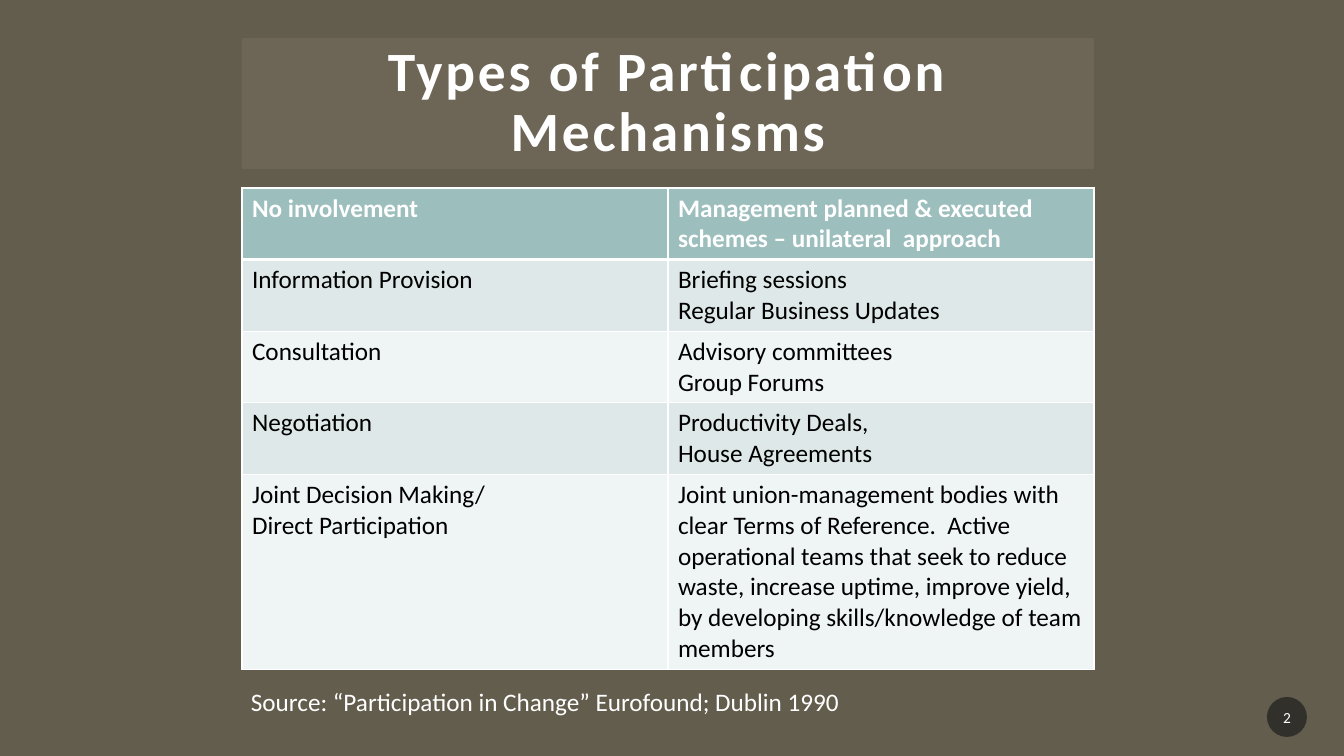
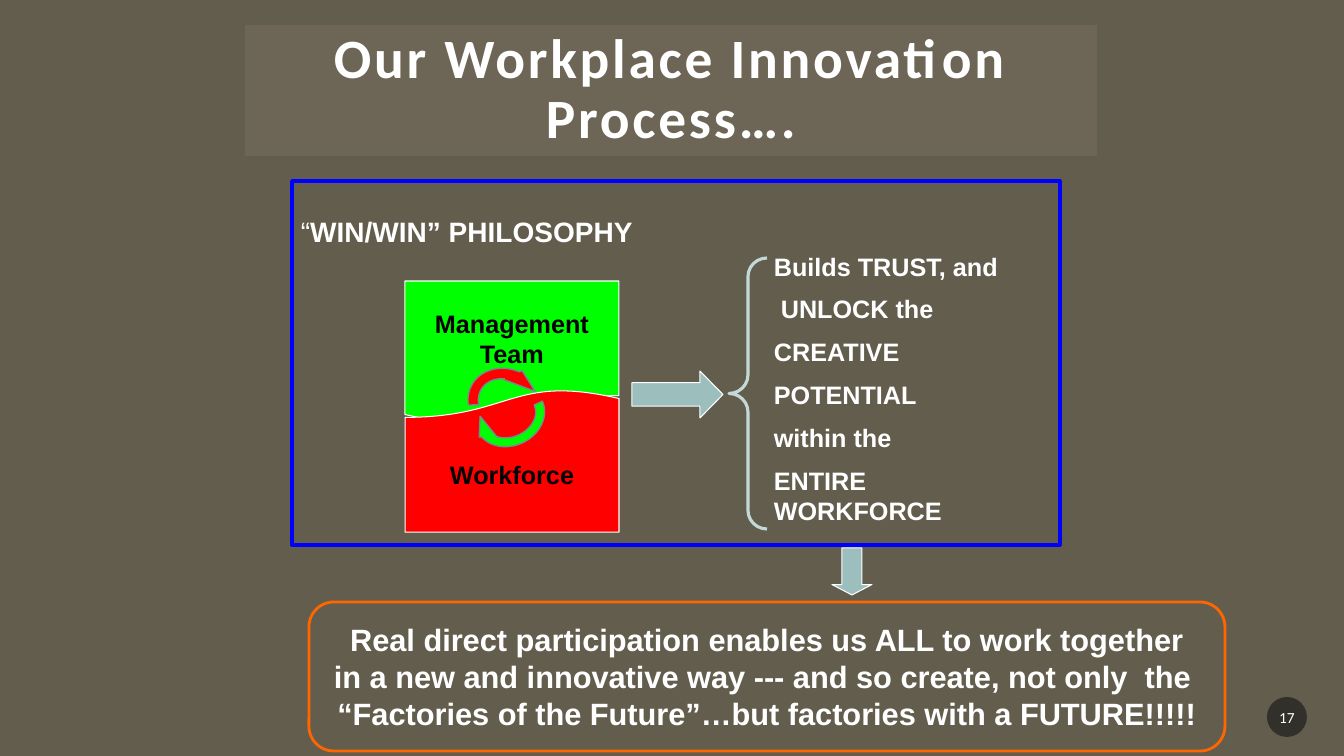
from dataclasses import dataclass

from pptx import Presentation
from pptx.dml.color import RGBColor
from pptx.enum.shapes import MSO_SHAPE
from pptx.enum.text import MSO_ANCHOR, PP_ALIGN
from pptx.oxml import parse_xml
from pptx.oxml.ns import nsdecls, qn
from pptx.util import Emu, Pt

PAGE_WIDTH, PAGE_HEIGHT = 1344, 756
EMU_PER_PX = 12192000 / PAGE_WIDTH


@dataclass(frozen=True)
class Theme:
    background: str = "635D4D"
    band: str = "A7A08E"
    badge: str = "1D1D1D"
    white: str = "FFFFFF"
    black: str = "000000"
    teal: str = "9CBEBD"
    dark_teal: str = "738D8C"
    pale_teal: str = "C4D8D7"
    row_tints: tuple[str, str] = ("DEE8E8", "EFF4F4")
    green: str = "00FF00"
    red: str = "FF0000"
    blue: str = "0000FF"
    orange: str = "FF6600"
    title_size: float = 39.6
    message_size: int = 22
    heading_size: int = 20
    body_size: int = 18
    badge_size: int = 11


THEME = Theme()


@dataclass(frozen=True)
class TextStyle:
    size: float = THEME.body_size
    font: str = "Arial"
    color: str = THEME.white
    bold: bool = True
    align: PP_ALIGN = PP_ALIGN.LEFT
    space_before: int = 0


TITLE = TextStyle(THEME.title_size, "Calibri", align=PP_ALIGN.CENTER)
BADGE = TextStyle(THEME.badge_size, "Calibri", bold=False, align=PP_ALIGN.CENTER)
SOURCE = TextStyle(font="Calibri", bold=False)
TABLE_HEAD = TextStyle(font="Calibri")
TABLE_BODY = TextStyle(font="Calibri", color=THEME.black, bold=False)
TEAM = TextStyle(color=THEME.black, align=PP_ALIGN.CENTER)
MESSAGE = TextStyle(THEME.message_size, align=PP_ALIGN.CENTER)
BENEFIT = TextStyle(space_before=9)
QUOTE_MARK = TextStyle(THEME.heading_size, bold=False)
HEADING = TextStyle(THEME.heading_size)


@dataclass(frozen=True)
class Area:
    left: int
    top: int
    width: int
    height: int

    def emu(self) -> tuple[Emu, Emu, Emu, Emu]:
        return px(self.left), px(self.top), px(self.width), px(self.height)


@dataclass(frozen=True)
class Figure:
    kind: MSO_SHAPE
    area: Area
    fill: str | None = None
    line: str | None = None
    line_width: float = 0.75
    opacity: int = 100
    rotation: float = 0
    adjustments: tuple[float, ...] = ()


def px(length: int) -> Emu:
    return Emu(round(length * EMU_PER_PX))


def style_span(span, style: TextStyle) -> None:
    span.font.name = style.font
    span.font.size = Pt(style.size)
    span.font.bold = style.bold
    span.font.color.rgb = RGBColor.from_string(style.color)


def write(frame, text: str, style: TextStyle) -> None:
    """Fill a text frame, one paragraph for each line of the text."""
    frame.text = text
    for index, para in enumerate(frame.paragraphs):
        para.alignment = style.align
        if index and style.space_before:
            para.space_before = Pt(style.space_before)
        for span in para.runs:
            style_span(span, style)


def set_margins(frame, horizontal: int, vertical: int) -> None:
    frame.margin_left = frame.margin_right = px(horizontal)
    frame.margin_top = frame.margin_bottom = px(vertical)


def draw(page, figure: Figure):
    shape = page.shapes.add_shape(figure.kind, *figure.area.emu())
    shape.shadow.inherit = False
    shape.rotation = figure.rotation
    for index, value in enumerate(figure.adjustments):
        shape.adjustments[index] = value
    if figure.fill:
        shape.fill.solid()
        shape.fill.fore_color.rgb = RGBColor.from_string(figure.fill)
        if figure.opacity < 100:
            color = shape.element.spPr.find(qn("a:solidFill"))[0]
            color.append(parse_xml(
                f'<a:alpha {nsdecls("a")} val="{figure.opacity * 1000}"/>'))
    else:
        shape.fill.background()
    if figure.line:
        shape.line.color.rgb = RGBColor.from_string(figure.line)
        shape.line.width = Pt(figure.line_width)
    else:
        shape.line.fill.background()
    return shape


def label(shape, text: str, style: TextStyle, wrap: bool = False) -> None:
    frame = shape.text_frame
    frame.word_wrap = wrap
    frame.vertical_anchor = MSO_ANCHOR.MIDDLE
    write(frame, text, style)


def add_text(page, area: Area, text: str, style: TextStyle):
    box = page.shapes.add_textbox(*area.emu())
    box.text_frame.word_wrap = True
    write(box.text_frame, text, style)
    return box


def add_title(page, left: int, top: int, text: str) -> None:
    band = draw(page, Figure(MSO_SHAPE.RECTANGLE, Area(left, top, 852, 131),
                             THEME.band, opacity=15))
    set_margins(band.text_frame, 20, 20)
    label(band, text, TITLE, wrap=True)
    para = band.text_frame.paragraphs[0]
    para.line_spacing = 0.9
    para.runs[0].font._element.set("spc", "200")


def add_page_number(page, number: int) -> None:
    badge = draw(page, Figure(MSO_SHAPE.OVAL, Area(1267, 697, 40, 40),
                              THEME.badge, opacity=70))
    set_margins(badge.text_frame, 2, 5)
    label(badge, str(number), BADGE)


def set_borders(cell, is_head: bool) -> None:
    """Put white lines round a cell, with a thick one below the header."""
    properties = cell._tc.get_or_add_tcPr()
    for index, (side, points) in enumerate(
            (("L", 1), ("R", 1), ("T", 1), ("B", 3 if is_head else 1))):
        properties.insert(index, parse_xml(
            f'<a:ln{side} {nsdecls("a")} w="{Pt(points)}"><a:solidFill>'
            f'<a:srgbClr val="{THEME.white}"/></a:solidFill></a:ln{side}>'))


MECHANISMS = (
    ("No involvement",
     "Management planned & executed  schemes – unilateral  approach"),
    ("Information Provision", "Briefing sessions\nRegular Business Updates"),
    ("Consultation", "Advisory committees\nGroup Forums"),
    ("Negotiation", "Productivity Deals,\nHouse Agreements"),
    ("Joint Decision Making/\nDirect Participation",
     "Joint union-management bodies with clear Terms of Reference.  Active "
     "operational teams that seek to reduce waste, increase uptime, improve "
     "yield, by developing skills/knowledge of team members"),
)
ROW_HEIGHTS = (71, 71, 71, 71, 194)


def add_mechanism_table(page) -> None:
    area = Area(242, 188, 852, sum(ROW_HEIGHTS))
    table = page.shapes.add_table(len(MECHANISMS), 2, *area.emu()).table
    for row_index, (texts, height) in enumerate(zip(MECHANISMS, ROW_HEIGHTS)):
        is_head = row_index == 0
        table.rows[row_index].height = px(height)
        fill = THEME.teal if is_head else THEME.row_tints[(row_index - 1) % 2]
        for column_index, text in enumerate(texts):
            cell = table.cell(row_index, column_index)
            cell.fill.solid()
            cell.fill.fore_color.rgb = RGBColor.from_string(fill)
            write(cell.text_frame, text, TABLE_HEAD if is_head else TABLE_BODY)
            set_borders(cell, is_head)


def build_mechanisms(page) -> None:
    add_title(page, 242, 38, "Types of Participation Mechanisms")
    add_mechanism_table(page)
    add_page_number(page, 2)
    add_text(page, Area(241, 681, 855, 72),
             "Source: “Participation in Change” Eurofound; Dublin 1990", SOURCE)


def build_process(page) -> None:
    heading = add_text(page, Area(291, 210, 352, 43), "“", QUOTE_MARK)
    span = heading.text_frame.paragraphs[0].add_run()
    span.text = "WIN/WIN” PHILOSOPHY"
    style_span(span, HEADING)

    management = draw(page, Figure(MSO_SHAPE.FLOWCHART_DOCUMENT,
                                   Area(405, 281, 214, 143), THEME.green, THEME.white))
    label(management, "Management\nTeam", TEAM)
    workforce = draw(page, Figure(MSO_SHAPE.FLOWCHART_DOCUMENT,
                                  Area(405, 389, 214, 143), THEME.red, THEME.white,
                                  rotation=180))
    label(workforce, "Workforce", TEAM)
    workforce.text_frame._txBody.bodyPr.set("rot", str(180 * 60000))

    add_text(page, Area(764, 246, 270, 300),
             "Builds TRUST, and\n UNLOCK the\nCREATIVE\nPOTENTIAL\nwithin the\n"
             "ENTIRE WORKFORCE", BENEFIT)
    message = draw(page, Figure(MSO_SHAPE.ROUNDED_RECTANGLE, Area(309, 602, 916, 149),
                                line=THEME.orange, line_width=2))
    label(message,
          "Real direct participation enables us ALL to work together\n"
          "in a new and innovative way --- and so create, not only  the \n"
          "“Factories of the Future”…but factories with a FUTURE!!!!!", MESSAGE)

    for figure in (
        Figure(MSO_SHAPE.RECTANGLE, Area(292, 181, 768, 364),
               line=THEME.blue, line_width=2.5),
        Figure(MSO_SHAPE.RIGHT_ARROW, Area(632, 371, 91, 47), THEME.teal,
               THEME.white, adjustments=(0.5, 0.49)),
        Figure(MSO_SHAPE.DOWN_ARROW, Area(832, 548, 40, 47), THEME.teal,
               THEME.white, adjustments=(0.5, 0.26)),
        Figure(MSO_SHAPE.CIRCULAR_ARROW, Area(467, 359, 80, 91), THEME.red,
               THEME.dark_teal, 1, rotation=299.8,
               adjustments=(0.13, 33.06, 204.58, 143.71, 0.13)),
        Figure(MSO_SHAPE.CIRCULAR_ARROW, Area(470, 382, 80, 68), THEME.green,
               THEME.dark_teal, 1, rotation=155.4,
               adjustments=(0.13, 33.06, 204.58, 108, 0.13)),
        Figure(MSO_SHAPE.LEFT_BRACE, Area(729, 258, 38, 271),
               line=THEME.pale_teal, line_width=2.25, adjustments=(0.49, 0.5)),
    ):
        draw(page, figure)
    add_title(page, 245, 25, "Our Workplace Innovation Process….")
    add_page_number(page, 17)


def main() -> None:
    deck = Presentation()
    deck.slide_width, deck.slide_height = px(PAGE_WIDTH), px(PAGE_HEIGHT)
    background = deck.slide_master.background.fill
    background.solid()
    background.fore_color.rgb = RGBColor.from_string(THEME.background)
    for build in (build_mechanisms, build_process):
        build(deck.slides.add_slide(deck.slide_layouts[6]))
    deck.save("out.pptx")


if __name__ == "__main__":
    main()
